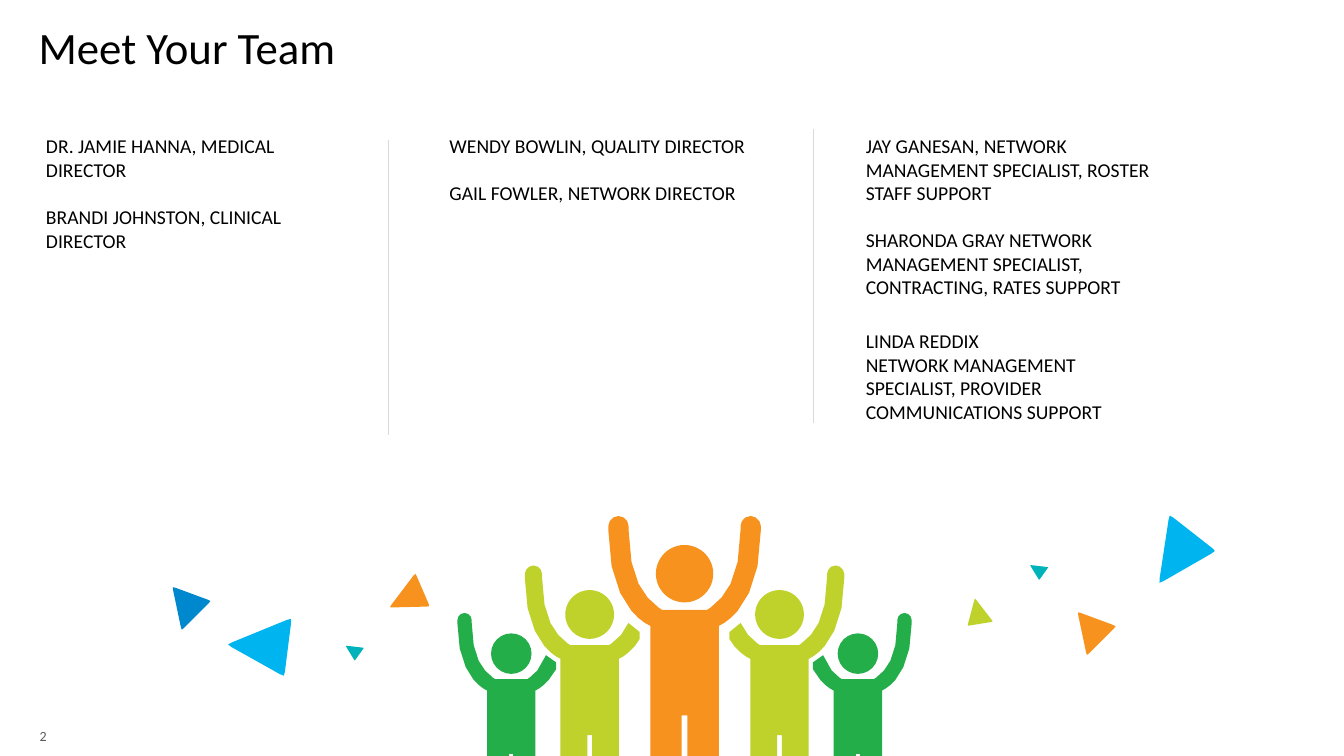
import math
from pptx import Presentation, util as u
from pptx.dml import color
from pptx.enum import shapes, text
from pptx.oxml import parse_xml
from pptx.oxml.ns import nsdecls

Pt = u.Pt
FONT = "Calibri"
GREEN, LIME, ORANGE = "23AE49", "BFD22B", "F7921E"
BLUE, SKY, TEAL = "0088CE", "00B5EF", "00B2BA"
CENTER_X = 489

# One side of a full-size figure, measured from its centre line and hand tops.
# A segment is one point (line) or three points (Bézier curve).
LEG = [
    [(2, 142.5)], [(2, 224)],
    [(2, 230), (7, 235.4), (13.3, 235.4)],
    [(19.5, 235.4), (24.5, 230.5), (24.5, 224)],
    [(24.5, 78.5)],
    [(28, 77), (33, 73.5), (38, 67.7)],
]
RAISED_ARM = [
    [(46.5, 57.6), (54.5, 39.6), (54.5, 10)], [(54.5, 7.2)],
    [(54.5, 3.6), (51, 0), (47.3, 0)],
    [(43, 0), (40, 3.6), (40, 7.2)], [(40, 10)],
    [(40, 36.7), (33, 51), (26.4, 58.3)],
]
SHOULDER = [[(18.5, 65.5)], [(16.2, 67)]]

# Corners as fractions of the frame
WIDE_TRIANGLE = [(-0.01, 0.61), (0.99, 1.01), (0.95, -0.01)]
STEEP_TRIANGLE = [(0, 0), (1.01, 0.33), (0.24, 1.01)]

TEAM = [
    (25.8, 158, [(0, "DR. JAMIE HANNA, MEDICAL DIRECTOR"),
                 (17, "BRANDI JOHNSTON, CLINICAL DIRECTOR")]),
    (314, 124, [(0, "WENDY BOWLIN, QUALITY DIRECTOR"),
                (17, "GAIL FOWLER, NETWORK DIRECTOR")]),
    (611.4, 238, [
        (0, "JAY GANESAN, NETWORK MANAGEMENT SPECIALIST, ROSTER STAFF SUPPORT"),
        (16.8, "SHARONDA GRAY NETWORK MANAGEMENT SPECIALIST, CONTRACTING, RATES SUPPORT"),
        (21.6, "LINDA REDDIX"),
        (0, "NETWORK MANAGEMENT SPECIALIST, PROVIDER COMMUNICATIONS SUPPORT")]),
]

# left, top, width, height, rotation, colour, corners
CONFETTI = [
    (123.1, 419, 27.4, 31, 0, BLUE, STEEP_TRIANGLE),
    (688.3, 429.8, 16.6, 20.9, 324.1, LIME, WIDE_TRIANGLE),
    (172.8, 442.8, 37.4, 49, 249.5, SKY, WIDE_TRIANGLE),
    (284.4, 413.3, 23, 30.2, 218.9, ORANGE, WIDE_TRIANGLE),
    (247.7, 460.1, 10.1, 13, 278.5, TEAL, WIDE_TRIANGLE),
    (736.6, 402.5, 10.1, 13, 278.5, TEAL, WIDE_TRIANGLE),
    (769.7, 437, 27.4, 31, 0, ORANGE, STEEP_TRIANGLE),
    (830.2, 370.8, 37.4, 49, 190.4, SKY, WIDE_TRIANGLE),
]


def rgb(value):
    return color.RGBColor.from_string(value)


def add_text(slide, frame, paragraphs, size, font_color="000000",
             anchor=text.MSO_ANCHOR.TOP, line_spacing=1.0):
    box = slide.shapes.add_textbox(*(Pt(length) for length in frame))
    text_frame = box.text_frame
    text_frame.word_wrap = True
    text_frame.vertical_anchor = anchor
    for index, (gap, wording) in enumerate(paragraphs):
        paragraph = text_frame.paragraphs[0] if index == 0 else text_frame.add_paragraph()
        paragraph.line_spacing = line_spacing
        paragraph.space_before = Pt(gap)
        run = paragraph.add_run()
        run.text = wording
        run.font.name = FONT
        run.font.size = Pt(size)
        run.font.color.rgb = rgb(font_color)


def add_divider(slide, x, top, height):
    line = slide.shapes.add_connector(
        shapes.MSO_CONNECTOR.STRAIGHT, Pt(x), Pt(top), Pt(x), Pt(top + height))
    line.line.color.rgb = rgb("D9D9D9")
    line.line.width = Pt(0.5)
    line._element.spPr.append(parse_xml(f"<a:effectLst {nsdecls('a')}/>"))


def paint(shape, fill):
    shape.shadow.inherit = False
    shape.fill.solid()
    shape.fill.fore_color.rgb = rgb(fill)
    shape.line.fill.background()


def flatten(segments, steps=3):
    """Turn line and curve segments into a list of points."""
    points = []
    for segment in segments:
        if len(segment) == 1:
            points.append(segment[0])
            continue
        controls = [points[-1], *segment]
        for step in range(1, steps + 1):
            t = step / steps
            weights = [math.comb(3, k) * t**k * (1 - t)**(3 - k) for k in range(4)]
            points.append(tuple(
                sum(weight * point[axis] for weight, point in zip(weights, controls))
                for axis in (0, 1)))
    return points


def add_outline(group, points, fill):
    corners = [(Pt(x), Pt(y)) for x, y in points]
    builder = group.shapes.build_freeform(*corners[0], scale=1.0)
    builder.add_line_segments(corners[1:], close=True)
    shape = builder.convert_to_shape()
    paint(shape, fill)
    return shape


def add_figure(group, center, top, scale, fill, facing=1, cut=None):
    """Draw a person; cut gives the corners of a partly hidden inner arm."""
    outer = flatten(LEG + RAISED_ARM + SHOULDER)
    inner = outer
    if cut:
        hidden_arm = [[corner] for corner in cut] + [[(26.4, 58.3)]]
        inner = flatten(LEG + hidden_arm + SHOULDER)
    outline = [(-x, y) for x, y in outer] + inner[::-1]
    add_outline(group, [(center + facing * scale * x, top + scale * y)
                        for x, y in outline], fill)
    size = 41 * scale
    head = group.shapes.add_shape(
        shapes.MSO_SHAPE.OVAL, Pt(center - size / 2), Pt(top + 20.7 * scale),
        Pt(size), Pt(size))
    paint(head, fill)


def add_triangle(group, left, top, width, height, rotation, fill, fractions):
    corners = [(left + x * width, top + y * height) for x, y in fractions]
    segments = []
    for index, corner in enumerate(corners):
        before, after = corners[index - 1], corners[(index + 1) % 3]
        start, end = (tuple(c + 0.08 * (n - c) for c, n in zip(corner, neighbour))
                      for neighbour in (before, after))
        segments += [[start], [corner, corner, end]]
    add_outline(group, flatten(segments, 2), fill).rotation = rotation


def main():
    presentation = Presentation()
    presentation.slide_width, presentation.slide_height = Pt(960), Pt(540)
    slide = presentation.slides.add_slide(presentation.slide_layouts[6])

    # Title and slide number
    add_text(slide, (20.5, 15.1, 794, 89.3), [(0, "Meet Your Team")], 32, line_spacing=0.9)
    add_text(slide, (21.2, 506.2, 42.5, 28.8), [(0, "2")], 10, "595959",
             text.MSO_ANCHOR.BOTTOM)

    # Cheering team
    group = slide.shapes.add_group_shape()
    rows = [
        (123.8, 437.8, 0.706, GREEN, [(45.4, 57), (45.4, 50), (35.2, 42.8)]),
        (67.8, 403.9, 0.85, LIME, [(42, 61.8), (42, 55.9), (32.6, 48.3)]),
    ]
    for offset, top, scale, fill, cut in rows:
        for facing in (1, -1):
            add_figure(group, CENTER_X - facing * offset, top, scale, fill, facing, cut)
    add_figure(group, CENTER_X, 368.6, 1, ORANGE)

    # Confetti
    for piece in CONFETTI:
        add_triangle(group, *piece)

    # Team columns and dividers
    for left, height, members in TEAM:
        add_text(slide, (left, 92.2, 230, height), members, 14)
    for x, top in ((277.2, 100.3), (581, 92.2)):
        add_divider(slide, x, top, 210.2)

    presentation.save("out.pptx")


if __name__ == "__main__":
    main()
